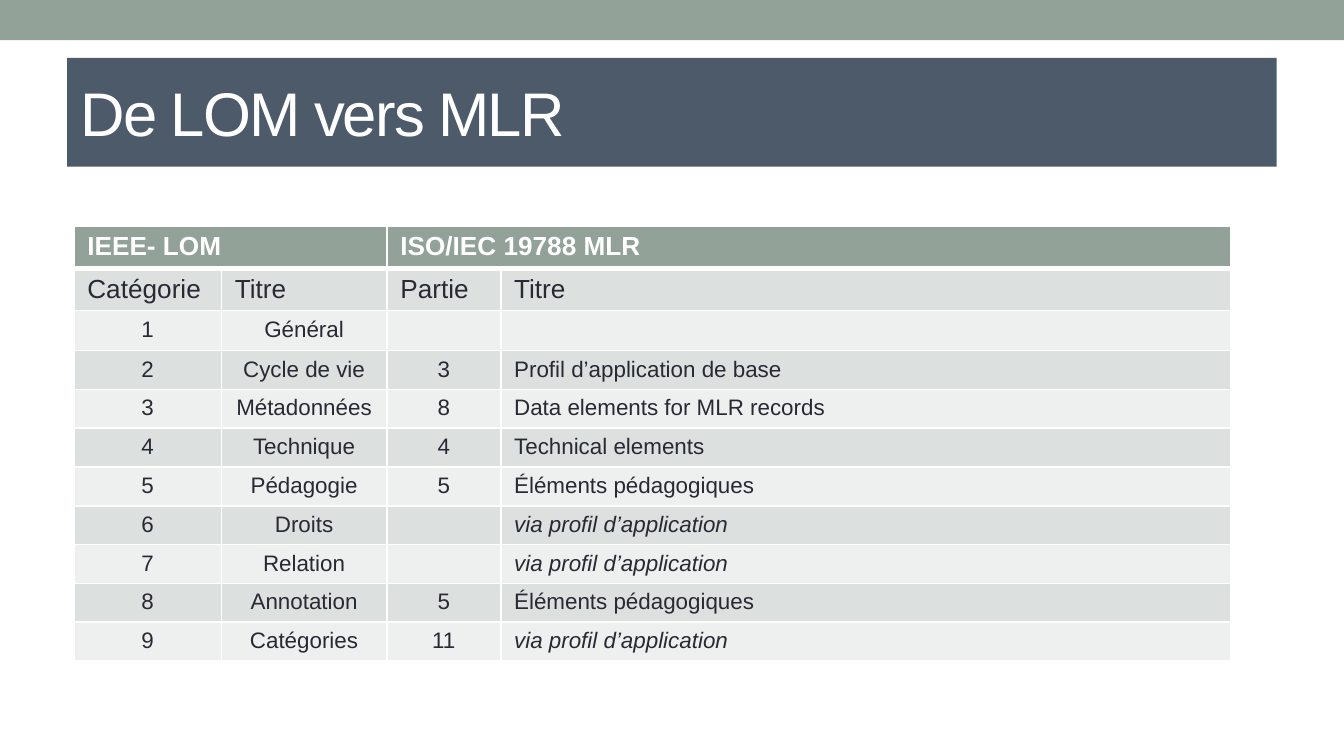
from lxml.etree import SubElement
from pptx import Presentation
from pptx.dml.color import RGBColor
from pptx.enum.shapes import MSO_SHAPE
from pptx.enum.text import MSO_ANCHOR, PP_ALIGN
from pptx.oxml.ns import qn
from pptx.util import Pt

WHITE = RGBColor(0xFF, 0xFF, 0xFF)
SAGE = RGBColor(0x93, 0xA2, 0x99)
SLATE = RGBColor(0x4C, 0x5A, 0x6A)
INK = RGBColor(0x29, 0x29, 0x34)
BANDS = (RGBColor(0xDC, 0xE0, 0xDE), RGBColor(0xEE, 0xF0, 0xEF))
FONT = "Arial"

VIA_PROFILE = "via profil d’application"
HEADINGS = ("IEEE- LOM", "", "ISO/IEC 19788 MLR", "")
SUBHEADINGS = ("Catégorie", "Titre", "Partie", "Titre")
MAPPINGS = (
    ("1", "Général", "", ""),
    ("2", "Cycle de vie", "3", "Profil d’application de base"),
    ("3", "Métadonnées", "8", "Data elements for MLR records"),
    ("4", "Technique", "4", "Technical elements"),
    ("5", "Pédagogie", "5", "Éléments pédagogiques"),
    ("6", "Droits", "", VIA_PROFILE),
    ("7", "Relation", "", VIA_PROFILE),
    ("8", "Annotation", "5", "Éléments pédagogiques"),
    ("9", "Catégories", "11", VIA_PROFILE),
)
COLUMN_WIDTHS = (79, 88.7, 61, 391)
ROW_HEIGHTS = (22.7, 22.7, 21.5) + (20.8,) * 8


def style_font(font, size, color):
    font.name = FONT
    font.size = Pt(size)
    font.color.rgb = color


def add_top_band(slide, left, top, width, height):
    band = slide.shapes.add_shape(
        MSO_SHAPE.RECTANGLE, Pt(left), Pt(top), Pt(width), Pt(height))
    band.shadow.inherit = False
    band.fill.solid()
    band.fill.fore_color.rgb = SAGE
    band.line.fill.background()


def place_title(slide, text, left, top, width, height):
    title = slide.shapes.title
    title.left, title.top = Pt(left), Pt(top)
    title.width, title.height = Pt(width), Pt(height)
    title.fill.solid()
    title.fill.fore_color.rgb = SLATE
    frame = title.text_frame
    frame.text = text
    frame.vertical_anchor = MSO_ANCHOR.MIDDLE
    paragraph = frame.paragraphs[0]
    paragraph.alignment = PP_ALIGN.LEFT
    style_font(paragraph.font, 33, WHITE)
    paragraph.runs[0].font._element.set("spc", "-100")


def set_borders(cell, bottom_width):
    """Draw white cell borders; call before the fill, which must follow them."""
    properties = cell._tc.get_or_add_tcPr()
    for side, width in (("L", 1), ("R", 1), ("T", 1), ("B", bottom_width)):
        line = SubElement(properties, qn(f"a:ln{side}"), w=str(Pt(width)))
        fill = SubElement(line, qn("a:solidFill"))
        SubElement(fill, qn("a:srgbClr"), val=str(WHITE))


def fill_cell(cell, text, row, column):
    is_heading = row == 0
    is_mapping = row >= 2
    set_borders(cell, 3 if is_heading else 1)
    cell.fill.solid()
    cell.fill.fore_color.rgb = SAGE if is_heading else BANDS[(row - 1) % 2]
    cell.margin_top = cell.margin_bottom = Pt(3.3)
    cell.margin_left = cell.margin_right = Pt(7.2)
    cell.text = text
    paragraph = cell.text_frame.paragraphs[0]
    centred = is_mapping and column < 3
    paragraph.alignment = PP_ALIGN.CENTER if centred else PP_ALIGN.LEFT
    style_font(paragraph.font, 12 if is_mapping else 14,
               WHITE if is_heading else INK)
    paragraph.font.bold = is_heading
    paragraph.font.italic = text == VIA_PROFILE


def add_mapping_table(slide, left, top):
    rows = (HEADINGS, SUBHEADINGS) + MAPPINGS
    table = slide.shapes.add_table(
        len(rows), len(COLUMN_WIDTHS), Pt(left), Pt(top),
        Pt(sum(COLUMN_WIDTHS)), Pt(sum(ROW_HEIGHTS))).table
    for column, width in zip(table.columns, COLUMN_WIDTHS):
        column.width = Pt(width)
    for table_row, height in zip(table.rows, ROW_HEIGHTS):
        table_row.height = Pt(height)
    for row, texts in enumerate(rows):
        for column, text in enumerate(texts):
            fill_cell(table.cell(row, column), text, row, column)
    for column in (0, 2):
        table.cell(0, column).merge(table.cell(0, column + 1))


def main():
    presentation = Presentation()
    presentation.slide_width = Pt(720)
    presentation.slide_height = Pt(405)
    slide = presentation.slides.add_slide(presentation.slide_layouts[5])
    add_top_band(slide, 0, 0, 720, 21.5)
    place_title(slide, "De LOM vers MLR", 36, 31, 648, 58.3)
    add_mapping_table(slide, 39.6, 121)
    presentation.save("out.pptx")


if __name__ == "__main__":
    main()
